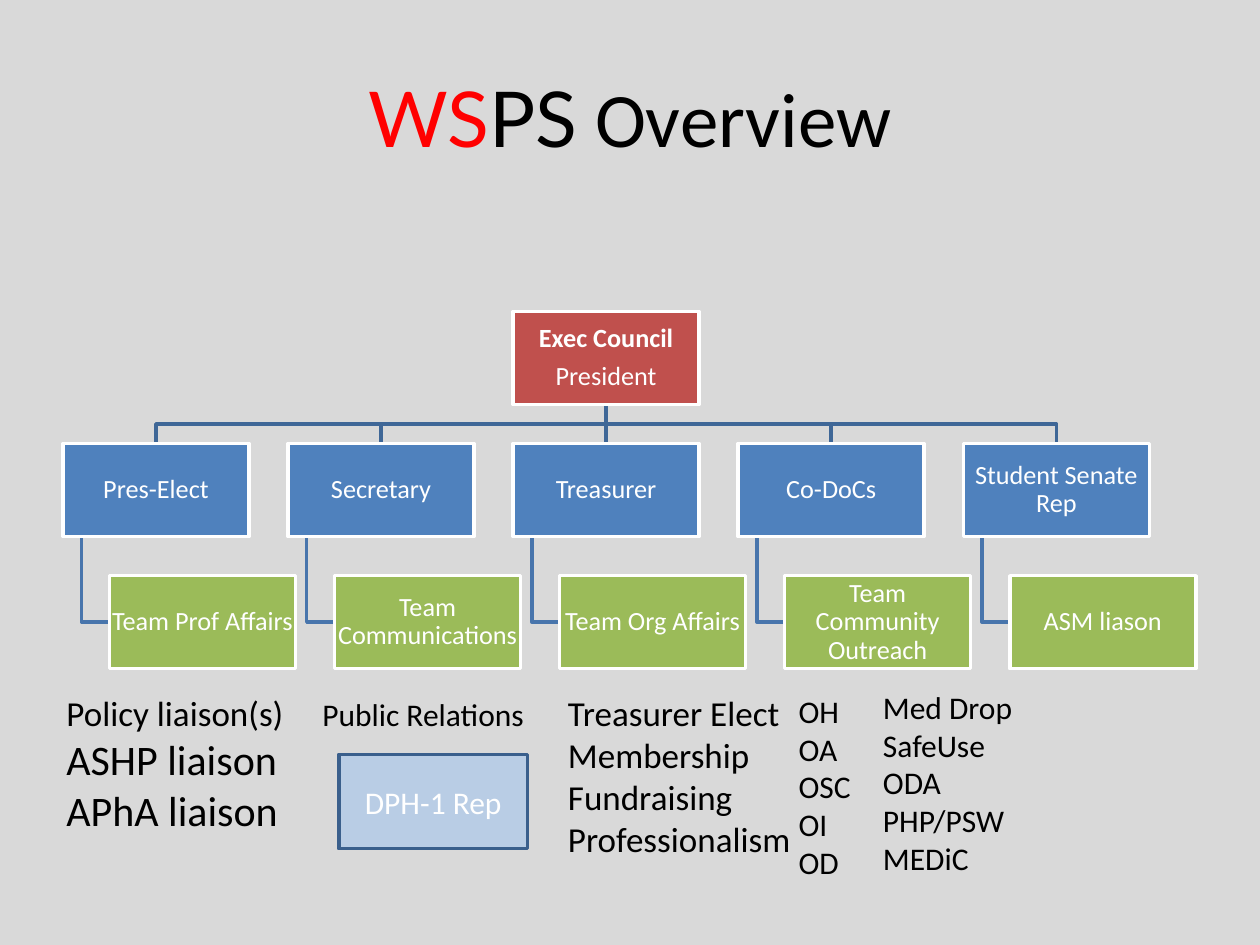
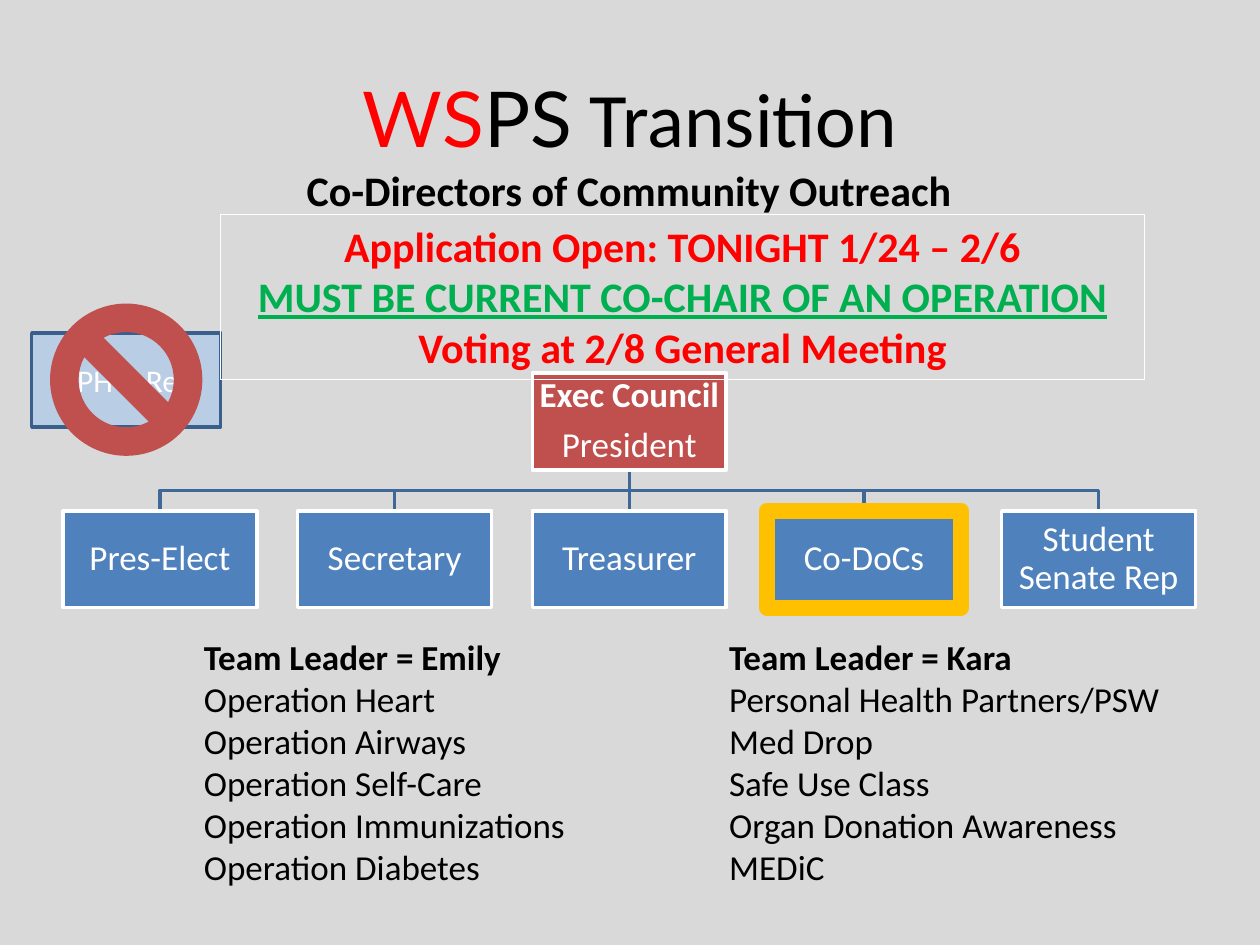
from dataclasses import dataclass
from typing import NamedTuple

from lxml.etree import SubElement
from pptx import Presentation
from pptx.dml.color import RGBColor
from pptx.enum.shapes import MSO_CONNECTOR as Link, MSO_SHAPE as Kind
from pptx.enum.text import MSO_ANCHOR as Anchor, MSO_AUTO_SIZE as Fit, PP_ALIGN as Align
from pptx.oxml.ns import qn
from pptx.util import Cm, Pt

BLACK = RGBColor(0x00, 0x00, 0x00)
WHITE = RGBColor(0xFF, 0xFF, 0xFF)
GREY = RGBColor(0xD9, 0xD9, 0xD9)
RED = RGBColor(0xFF, 0x00, 0x00)
GREEN = RGBColor(0x00, 0xB0, 0x50)
GOLD = RGBColor(0xFF, 0xC0, 0x00)
BRICK = RGBColor(0xC0, 0x50, 0x4D)
BLUE = RGBColor(0x4F, 0x81, 0xBD)
OLIVE = RGBColor(0x9B, 0xBB, 0x59)
PALE = RGBColor(0xB9, 0xCD, 0xE5)
NAVY = RGBColor(0x3A, 0x5F, 0x8C)
RAIL = RGBColor(0x3F, 0x67, 0x97)
STEM = RGBColor(0x48, 0x75, 0xAC)

POSTS = ["Pres-Elect", "Secretary", "Treasurer", "Co-DoCs", "Student Senate Rep"]
TEAMS = ["Team Prof Affairs", "Team Communications", "Team Org Affairs",
         "Team Community Outreach", "ASM liason"]


class Area(NamedTuple):
    """A rectangle in centimetres."""
    left: float
    top: float
    width: float
    height: float

    def cm(self) -> list:
        return [Cm(side) for side in self]


@dataclass
class Run:
    text: str
    look: dict


@dataclass
class Note:
    area: Area
    lines: list
    size: float = 20
    level: int = 0
    align: Align = Align.LEFT


@dataclass
class Tree:
    """An organisation chart; every gap follows from the box width."""
    top: float
    width: float
    size: float
    teams: list
    left: float = 1.27
    marked: str = ""

    @property
    def height(self) -> float:
        return self.width / 2

    @property
    def drop(self) -> float:
        return self.height * 1.42

    def box(self, col: int, row: int, shift: float = 0) -> Area:
        return Area(self.left + self.width * (1.21 * col + shift),
                    self.top + self.drop * row, self.width, self.height)


def style(font, look: dict) -> None:
    for key, value in look.items():
        if key == "color":
            font.color.rgb = value
        else:
            setattr(font, key, value)


def write(frame, lines: list, base: dict, align: Align, **spacing) -> None:
    """Fill a frame; a line is a string, a Run or a list of Runs."""
    frame.word_wrap = True
    for num, line in enumerate(lines):
        para = frame.paragraphs[0] if num == 0 else frame.add_paragraph()
        for key, value in {"alignment": align, **spacing}.items():
            setattr(para, key, value)
        for part in line if isinstance(line, list) else [line]:
            piece = Run(part, {}) if isinstance(part, str) else part
            run = para.add_run()
            run.text = piece.text
            style(run.font, {"name": "Calibri", **base, **piece.look})


def add_box(slide, area: Area, fill=None, line=None, weight: float = 2, kind=Kind.RECTANGLE):
    box = slide.shapes.add_shape(kind, *area.cm())
    box.shadow.inherit = False
    if fill is None:
        box.fill.background()
    else:
        box.fill.solid()
        box.fill.fore_color.rgb = fill
    if line is None:
        box.line.fill.background()
    else:
        box.line.color.rgb = line
        box.line.width = Pt(weight)
    return box


def add_note(slide, note: Note) -> None:
    frame = slide.shapes.add_textbox(*note.area.cm()).text_frame
    frame.auto_size = Fit.SHAPE_TO_FIT_TEXT
    write(frame, note.lines, {"size": Pt(note.size), "color": BLACK},
          note.align, level=note.level)


def add_rep(slide, left: float, top: float) -> None:
    box = add_box(slide, Area(left, top, 3.81, 1.9), PALE, NAVY)
    write(box.text_frame, ["DPH-1 Rep"], {"size": Pt(18), "color": WHITE}, Align.CENTER)


def send_back(shape) -> None:
    shape.element.getparent().insert(2, shape.element)


def add_path(slide, points: list, color: RGBColor) -> None:
    """Draw an open bent line behind the boxes."""
    first, *rest = [(Cm(x), Cm(y)) for x, y in points]
    pen = slide.shapes.build_freeform(*first)
    pen.add_line_segments(rest, close=False)
    path = pen.convert_to_shape()
    path.shadow.inherit = False
    path.fill.background()
    path.line.color.rgb = color
    path.line.width = Pt(2)
    send_back(path)


def add_drop(slide, upper, lower) -> None:
    line = slide.shapes.add_connector(Link.STRAIGHT, 0, 0, 0, 0)
    line.begin_connect(upper, 2)
    line.end_connect(lower, 0)
    line.line.color.rgb = RAIL
    line.line.width = Pt(2)
    SubElement(line.element.spPr, qn("a:effectLst"))
    send_back(line)


def add_tree(slide, tree: Tree) -> None:
    def label(area: Area, lines: list, fill: RGBColor, line=WHITE, weight: float = 2):
        box = add_box(slide, area, fill, line, weight)
        frame = box.text_frame
        for side in ("left", "top", "right", "bottom"):
            setattr(frame, f"margin_{side}", Cm(0.03))
        write(frame, lines, {"size": Pt(tree.size), "color": WHITE}, Align.CENTER,
              line_spacing=0.9, space_after=Pt(tree.size * 0.35))
        return box

    mid = len(POSTS) // 2
    head = tree.box(mid, 0)
    chief = label(head, [Run("Exec Council", {"bold": True}), "President"], BRICK)
    axis, foot = head.left + tree.width / 2, head.top + tree.height
    for col, post in enumerate(POSTS):
        area = tree.box(col, 1)
        edge = (GOLD, 9) if post == tree.marked else (WHITE, 2)
        box = label(area, [post], BLUE, *edge)
        if col == mid:
            add_drop(slide, chief, box)
            continue
        bend, goal = (foot + area.top) / 2, area.left + tree.width / 2
        add_path(slide, [(axis, foot), (axis, bend), (goal, bend), (goal, area.top)], RAIL)
    for col, team in enumerate(tree.teams):
        post, area = tree.box(col, 1), tree.box(col, 2, 0.25)
        label(area, [team], OLIVE)
        stem, level = post.left + tree.width / 10, area.top + tree.height / 2
        add_path(slide, [(stem, post.top + tree.height), (stem, level), (area.left, level)],
                 STEM)


def add_slide(deck, topic: str):
    """Start a slide with the shared background and title."""
    slide = deck.slides.add_slide(deck.slide_layouts[6])
    slide.background.fill.solid()
    slide.background.fill.fore_color.rgb = GREY
    frame = slide.shapes.add_textbox(*Area(1.27, 0.76, 22.86, 3.18).cm()).text_frame
    frame.vertical_anchor = Anchor.MIDDLE
    title = [Run("WS", {"name": "Lato", "color": RED}), Run("PS", {"name": "Lato"}),
             f" {topic}"]
    write(frame, [title], {"size": Pt(44), "color": BLACK}, Align.CENTER)
    return slide


def add_overview(deck) -> None:
    slide = add_slide(deck, "Overview")
    add_tree(slide, Tree(6.28, 3.75, 15, TEAMS))
    add_rep(slide, 6.83, 15.21)
    large = {"size": Pt(24)}
    for note in (
        Note(Area(-0.18, 13.82, 7.01, 3.18),
             ["Policy liaison(s)", Run("ASHP liaison", large), Run("APhA liaison", large)],
             level=1),
        Note(Area(6.25, 13.89, 4.95, 1.02), ["Public Relations"], 18),
        Note(Area(11.2, 13.82, 5.23, 3.68),
             ["Treasurer Elect", "Membership", "Fundraising Professionalism"]),
        Note(Area(15.85, 13.82, 2.87, 4.11), ["OH", "OA", "OSC", "OI", "OD"], 18),
        Note(Area(17.55, 13.74, 7.85, 4.11),
             ["Med Drop", "SafeUse", "ODA", "PHP/PSW", "MEDiC"], 18),
    ):
        add_note(slide, note)


def add_transition(deck) -> None:
    slide = add_slide(deck, "Transition")
    add_tree(slide, Tree(7.52, 3.91, 20, [], marked="Co-DoCs"))
    add_rep(slide, 0.64, 6.71)
    bold = {"bold": True}
    add_note(slide, Note(Area(5.06, 3.2, 15.24, 1.27),
                         [Run("Co-Directors of Community Outreach", bold)],
                         24, align=Align.CENTER))
    notice = add_box(slide, Area(4.45, 4.32, 18.62, 3.33), line=WHITE, weight=0.75)
    notice.text_frame.vertical_anchor = Anchor.TOP
    write(notice.text_frame,
          ["Application Open: TONIGHT 1/24 – 2/6",
           Run("MUST BE CURRENT CO-CHAIR OF AN OPERATION",
               {"color": GREEN, "underline": True}),
           "Voting at 2/8 General Meeting"],
          {"size": Pt(24), "color": RED, "bold": True}, Align.CENTER)
    for left, leader, work in (
        (3.86, "Emily", ["Operation Heart", "Operation Airways", "Operation Self-Care",
                         "Operation Immunizations", "Operation Diabetes"]),
        (14.45, "Kara", ["Personal Health Partners/PSW", "Med Drop", "Safe Use Class",
                         "Organ Donation Awareness", "MEDiC"]),
    ):
        add_note(slide, Note(Area(left, 12.69, 13.97, 5.38),
                             [Run(f"Team Leader = {leader}", bold), *work]))
    add_box(slide, Area(1.01, 6.12, 3.07, 3.07), BRICK, kind=Kind.NO_SYMBOL)


def main() -> None:
    deck = Presentation()
    deck.slide_width, deck.slide_height = Cm(25.4), Cm(19.05)
    add_overview(deck)
    add_transition(deck)
    deck.save("out.pptx")


if __name__ == "__main__":
    main()
